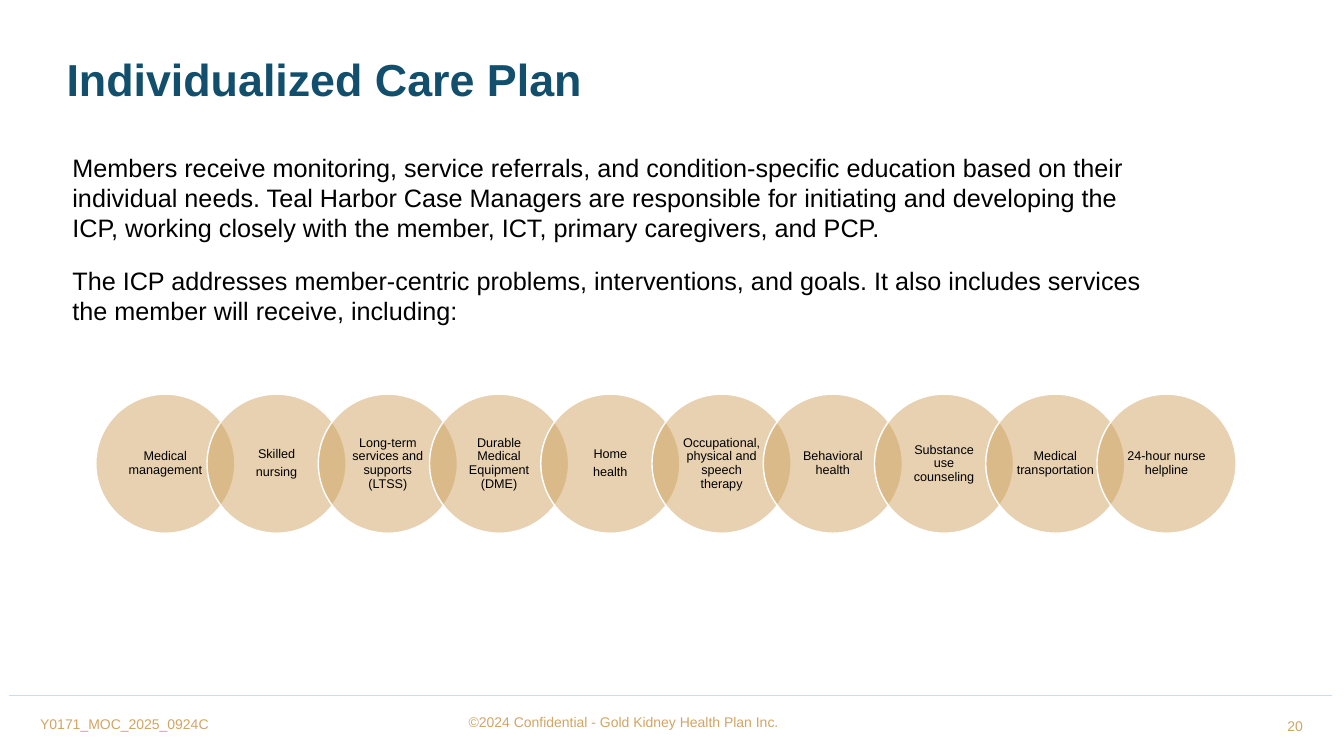
from lxml import etree
from pptx import Presentation
from pptx.dml.color import RGBColor
from pptx.enum import shapes, text
from pptx.oxml import ns
from pptx.util import Inches, Pt

COLORS = {"gold": "D1A565", "navy": "124F6D", "black": "000000",
          "white": "FFFFFF", "rule": "CCDDEA"}
BODY = [
    "Members receive monitoring, service referrals, and condition-specific education "
    "based on their individual needs. Teal Harbor Case Managers are responsible for "
    "initiating and developing the ICP, working closely with the member, ICT, primary "
    "caregivers, and PCP.",
    "The ICP addresses member-centric problems, interventions, and goals. It also "
    "includes services the member will receive, including:",
]
# One list of paragraphs per circle
SERVICES = [
    ["Medical management"],
    ["Skilled", "nursing"],
    ["Long-term services and supports (LTSS)"],
    ["Durable Medical Equipment (DME)"],
    ["Home", "health"],
    ["Occupational, physical and speech therapy"],
    ["Behavioral health"],
    ["Substance use counseling"],
    ["Medical transportation"],
    ["24-hour nurse helpline"],
]


def rgb(name):
    return RGBColor.from_string(COLORS[name])


def write(sp, paragraphs, size, color="black", bold=False, align="LEFT", anchor="TOP",
          line=1.0, before=0, after=0, wrap=True):
    tf = sp.text_frame
    tf.word_wrap = wrap
    tf.vertical_anchor = getattr(text.MSO_ANCHOR, anchor)
    for i, content in enumerate(paragraphs):
        p = tf.paragraphs[0] if i == 0 else tf.add_paragraph()
        p.alignment = getattr(text.PP_ALIGN, align)
        p.line_spacing = line
        p.space_before = Pt(before if i else 0)
        p.space_after = Pt(after)
        r = p.add_run()
        r.text = content
        r.font.name, r.font.size, r.font.bold = "Arial", Pt(size), bold
        r.font.color.rgb = rgb(color)


def text_box(s, box, paragraphs, size, **fmt):
    sp = s.shapes.add_textbox(*map(Inches, box))
    write(sp, paragraphs, size, **fmt)


def add_title(s, box, content):
    sp = s.shapes.title
    sp.left, sp.top, sp.width, sp.height = map(Inches, box)
    write(sp, [content], 32, color="navy", bold=True, line=0.9)


def add_circle(s, left, top, size, paragraphs):
    sp = s.shapes.add_shape(shapes.MSO_SHAPE.OVAL, Inches(left), Inches(top),
                            Inches(size), Inches(size))
    sp.shadow.inherit = False
    sp.fill.solid()
    sp.fill.fore_color.rgb = rgb("gold")
    # Half transparency, so that overlaps look darker
    color = sp.fill._xPr.find(".//" + ns.qn("a:srgbClr"))
    etree.SubElement(color, ns.qn("a:alpha"), val="50000")
    sp.line.color.rgb = rgb("white")
    sp.line.width = Pt(1)
    tf = sp.text_frame
    tf.margin_left = tf.margin_right = Inches(0.08)
    tf.margin_top = tf.margin_bottom = Inches(0.01)
    write(sp, paragraphs, 9, align="CENTER", anchor="MIDDLE", line=0.9, after=3)


def add_service_chain(s, box, services):
    left, top, width, size = box
    pitch = (width - size) / (len(services) - 1)
    for i, paragraphs in enumerate(services):
        add_circle(s, left + i * pitch, top, size, paragraphs)


def add_footer(s, box):
    left, top, width, _ = box
    rule = s.shapes.add_connector(shapes.MSO_CONNECTOR.STRAIGHT, Inches(left), Inches(top),
                                  Inches(left + width), Inches(top))
    rule.line.color.rgb = rgb("rule")
    rule.line.width = Pt(0.5)
    etree.SubElement(rule._element.spPr, ns.qn("a:effectLst"))
    text_box(s, (left + 0.21, top + 0.15, 1.88, 0.27), ["Y0171_MOC_2025_0924C"], 10,
             color="gold", wrap=False)
    text_box(s, (left + 4.46, top + 0.13, 4.17, 0.27),
             ["©2024 Confidential - Gold Kidney Health Plan Inc."], 10,
             color="gold", anchor="MIDDLE")
    text_box(s, (left + 10.4, top + 0.11, 2.53, 0.38), ["20"], 10,
             color="gold", align="RIGHT", anchor="MIDDLE")


def main():
    prs = Presentation()
    prs.slide_width, prs.slide_height = Inches(13.33), Inches(7.5)
    s = prs.slides.add_slide(prs.slide_layouts.get_by_name("Title Only"))
    add_footer(s, (0.09, 6.9, 13.12, 0.6))
    add_title(s, (0.56, 0.52, 11.14, 0.67), "Individualized Care Plan")
    text_box(s, (0.62, 1.46, 11, 4.4), BODY, 18, before=10, after=6)
    add_service_chain(s, (0.95, 3.91, 11.31, 1.38), SERVICES)
    prs.save("out.pptx")


if __name__ == "__main__":
    main()
